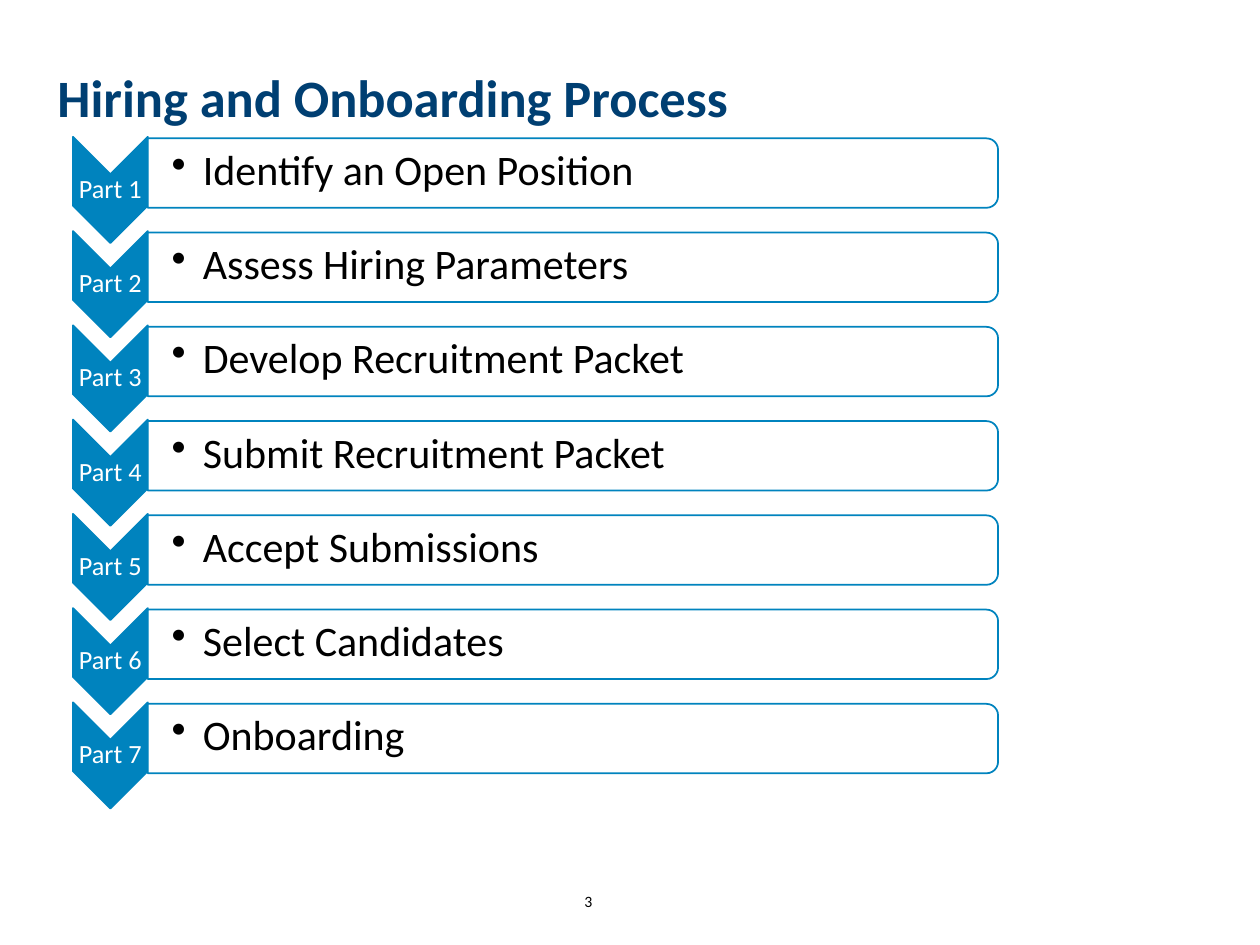
from lxml import etree
from pptx import Presentation
from pptx.dml.color import RGBColor
from pptx.enum.shapes import MSO_SHAPE
from pptx.enum.text import MSO_ANCHOR, PP_ALIGN
from pptx.oxml.ns import qn
from pptx.util import Cm, Pt

CHEVRON = MSO_SHAPE.CHEVRON
ROUND_TOP = MSO_SHAPE.ROUND_2_SAME_RECTANGLE
MIDDLE = MSO_ANCHOR.MIDDLE
LEFT, CENTER = PP_ALIGN.LEFT, PP_ALIGN.CENTER

NAVY = RGBColor(0x00, 0x3F, 0x72)
BLUE = RGBColor(0x00, 0x83, 0xBE)
WHITE = RGBColor(0xFF, 0xFF, 0xFF)
BLACK = RGBColor(0x00, 0x00, 0x00)

FONT = "Calibri"
STEPS = [
    "Identify an Open Position",
    "Assess Hiring Parameters",
    "Develop Recruitment Packet",
    "Submit Recruitment Packet",
    "Accept Submissions",
    "Select Candidates",
    "Onboarding",
]
STEP_PITCH = 1.9
STEP_HEIGHT = 2.14
CHEVRON_WIDTH = 1.51
BAR_HEIGHT = 1.4


def add_text(shapes, box, text, size, color, bold=False, align=LEFT,
             insets=(0.25, 0.13, 0.25, 0.13), spacing=0.9, bullet_indent=None):
    """Box is left, top, width, height in cm; insets are left, top, right, bottom."""
    text_box = shapes.add_textbox(*map(Cm, box))
    frame = text_box.text_frame
    frame.word_wrap = True
    frame.vertical_anchor = MIDDLE
    (frame.margin_left, frame.margin_top,
     frame.margin_right, frame.margin_bottom) = map(Cm, insets)
    paragraph = frame.paragraphs[0]
    paragraph.text = text
    paragraph.alignment = align
    paragraph.line_spacing = spacing
    if bullet_indent:
        properties = paragraph._p.get_or_add_pPr()
        properties.set("marL", str(Cm(bullet_indent)))
        properties.set("indent", str(-Cm(bullet_indent)))
        etree.SubElement(properties, qn("a:buChar")).set("char", "•")
    font = paragraph.font
    font.name, font.size, font.bold = FONT, Pt(size), bold
    font.color.rgb = color


def add_quarter_turned(shapes, preset, box, fill):
    """Turn a shape clockwise by 90 degrees so that it shows in the given box."""
    left, top, width, height = box
    shift = (width - height) / 2
    shape = shapes.add_shape(
        preset, *map(Cm, (left + shift, top - shift, height, width)))
    shape.rotation = 90
    shape.shadow.inherit = False
    shape.fill.solid()
    shape.fill.fore_color.rgb = fill
    shape.line.color.rgb = BLUE
    shape.line.width = Pt(1)
    return shape


def set_opacity(shape, percent):
    color = shape.fill._xPr.find(qn("a:solidFill"))[0]
    etree.SubElement(color, qn("a:alpha")).set("val", str(percent * 1000))


def add_step(shapes, box, label, step):
    left, top, width, height = box
    add_quarter_turned(shapes, CHEVRON, (left, top, CHEVRON_WIDTH, height), BLUE)
    add_text(shapes, (left, top + 0.75, CHEVRON_WIDTH, 0.64), label, 15, WHITE,
             align=CENTER, insets=(0.03,) * 4)
    bar_left = left + CHEVRON_WIDTH
    bar_width = width - CHEVRON_WIDTH
    bar = add_quarter_turned(
        shapes, ROUND_TOP, (bar_left, top + 0.03, bar_width, BAR_HEIGHT), WHITE)
    set_opacity(bar, 90)
    add_text(shapes, (bar_left, top + 0.08, bar_width - 0.07, 1.25), step, 24,
             BLACK, insets=(0.48, 0.04, 0.04, 0.04), bullet_indent=0.63)


def add_process(slide, left, top, width):
    process = slide.shapes.add_group_shape()
    for index, step in enumerate(STEPS):
        box = (left, top + index * STEP_PITCH, width, STEP_HEIGHT)
        add_step(process.shapes, box, f"Part {index + 1}", step)


def main():
    presentation = Presentation()
    presentation.slide_width, presentation.slide_height = Cm(25.4), Cm(19.05)
    slide = presentation.slides.add_slide(presentation.slide_layouts[6])
    add_text(slide.shapes, (0.91, 0.94, 20.24, 2.16), "Hiring and Onboarding Process",
             30, NAVY, bold=True)
    add_text(slide.shapes, (11.15, 17.65, 1.42, 1.02), "3", 9, BLACK,
             align=CENTER, spacing=1.0)
    add_process(slide, left=1.47, top=2.76, width=18.65)
    presentation.save("out.pptx")


if __name__ == "__main__":
    main()
